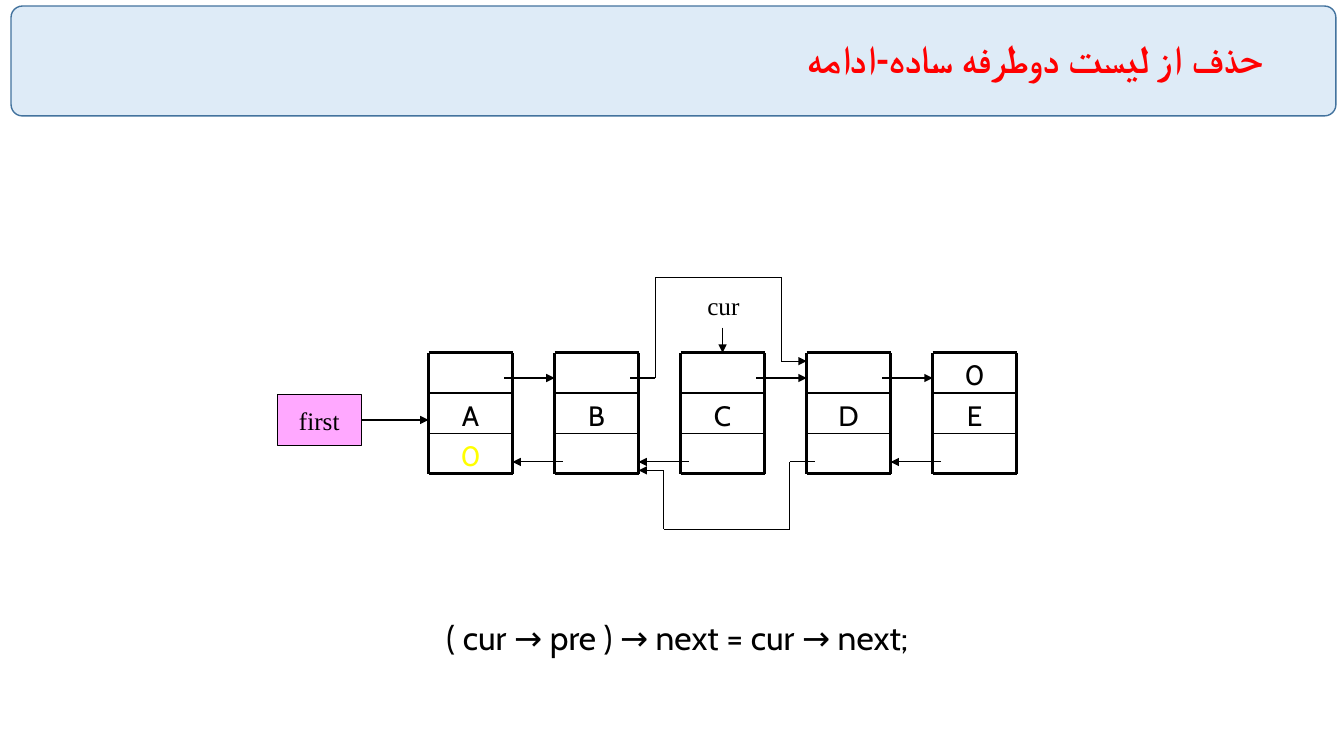
from itertools import pairwise

from lxml import etree
from pptx import Presentation
from pptx.dml.color import RGBColor
from pptx.enum.shapes import MSO_CONNECTOR, MSO_SHAPE
from pptx.enum.text import MSO_ANCHOR, MSO_AUTO_SIZE, PP_ALIGN
from pptx.oxml.ns import qn
from pptx.util import Inches, Pt

STRAIGHT = MSO_CONNECTOR.STRAIGHT
RECTANGLE, ROUNDED = MSO_SHAPE.RECTANGLE, MSO_SHAPE.ROUNDED_RECTANGLE
LEFT, CENTER, RIGHT = PP_ALIGN.LEFT, PP_ALIGN.CENTER, PP_ALIGN.RIGHT
TOP, MIDDLE = MSO_ANCHOR.TOP, MSO_ANCHOR.MIDDLE
FIT_SHAPE = MSO_AUTO_SIZE.SHAPE_TO_FIT_TEXT

COLORS = {
    "banner": "DEEBF7", "banner_line": "43739E", "title": "FF0000",
    "ink": "000000", "null": "FFFF00", "first": "FF00FF",
}
BODY, LABEL, HEADING = "Cabin", "Times New Roman", "Calibri"
SLIDE_WIDTH, SLIDE_HEIGHT = 13.33, 7.5

# The list is laid out on a grid of one twelfth of an inch
UNIT = 1 / 12
NODE_WIDTH, NODE_STEP, ROW_HEIGHT = 10 * UNIT, 15 * UNIT, 0.4
NODES = [  # next, data, previous
    ("", "A", "0"), ("", "B", ""), ("", "C", ""), ("", "D", ""), ("0", "E", ""),
]


def color(name):
    return RGBColor.from_string(COLORS[name])


def write(shape, text, size, font, ink="ink", align=LEFT, anchor=TOP, wrap=True):
    frame = shape.text_frame
    frame.word_wrap = wrap
    frame.vertical_anchor = anchor
    paragraph = frame.paragraphs[0]
    paragraph.alignment = align
    run = paragraph.add_run()
    run.text = text
    run.font.size = Pt(size)
    run.font.name = font
    run.font.color.rgb = color(ink)
    return paragraph, run


def add_text(slide, box, *content, **style):
    shape = slide.shapes.add_textbox(*map(Inches, box))
    return shape, *write(shape, *content, **style)


def add_box(slide, preset, box, fill, line, width):
    shape = slide.shapes.add_shape(preset, *map(Inches, box))
    shape.shadow.inherit = False
    shape.fill.solid()
    shape.fill.fore_color.rgb = color(fill)
    shape.line.color.rgb = color(line)
    shape.line.width = Pt(width)
    return shape


def add_line(slide, start, end, width=0.75, arrow=False):
    line = slide.shapes.add_connector(STRAIGHT, *map(Inches, (*start, *end)))
    line.line.color.rgb = color("ink")
    line.line.width = Pt(width)
    properties = line._element.spPr
    if arrow:
        etree.SubElement(properties.find(qn("a:ln")), qn("a:tailEnd"), type="triangle")
    etree.SubElement(properties, qn("a:effectLst"))


def add_route(slide, points):
    """Joined straight lines, with an arrowhead on the last one."""
    for start, end in pairwise(points):
        add_line(slide, start, end, arrow=end == points[-1])


def add_banner(slide, left, top, width, height):
    banner = add_box(slide, ROUNDED, (left, top, width, height),
                     "banner", "banner_line", 1)
    banner.adjustments[0] = 0.103
    title_box = (left + 0.13, top + 0.09, width - 0.75, height - 0.19)
    _, paragraph, run = add_text(
        slide, title_box, "حذف از ليست دوطرفه ساده-ادامه", 28, HEADING,
        ink="title", align=RIGHT, anchor=MIDDLE)
    paragraph.line_spacing = 0.9
    paragraph._p.get_or_add_pPr().set("rtl", "1")
    run.font.bold = True
    etree.SubElement(run._r.get_or_add_rPr(), qn("a:cs"), typeface=HEADING)


def add_node(slide, left, top, values):
    right, bottom = left + NODE_WIDTH, top + len(values) * ROW_HEIGHT
    for row, value in enumerate(values):
        if value:
            ink = "null" if (row, value) == (2, "0") else "ink"
            add_text(slide, (left, top + row * ROW_HEIGHT, NODE_WIDTH, ROW_HEIGHT),
                     value, 20, BODY, ink=ink, align=CENTER)
    for row in range(len(values) + 1):
        y = top + row * ROW_HEIGHT
        width = 2.25 if row in (0, len(values)) else 1
        add_line(slide, (left, y), (right, y), width)
    for x in (left, right):
        add_line(slide, (x, top), (x, bottom), 2.25)


def add_list(slide, left, top):
    def at(column, row):
        return left + column * UNIT, top + row * UNIT

    # Nodes
    for index, values in enumerate(NODES):
        add_node(slide, left + index * NODE_STEP, top, values)

    # Links between neighbours; B-next and D-previous take the routes below
    for index in range(len(NODES) - 1):
        column = index * 15
        if index != 1:
            add_line(slide, at(column + 9, 3), at(column + 15, 3), arrow=True)
        if index != 2:
            add_line(slide, at(column + 16, 13), at(column + 10, 13), arrow=True)

    # Routes around C
    add_route(slide, [at(24, 3), at(27, 3), at(27, -9), at(42, -9), at(42, 1), at(45, 1)])
    add_route(slide, [at(46, 13), at(43, 13), at(43, 21), at(28, 21), at(28, 14), at(25, 14)])

    # Pointer to the first node
    first = add_box(slide, RECTANGLE, (*at(-18, 5), NODE_WIDTH, 6 * UNIT),
                    "first", "ink", 0.75)
    fill_color = first._element.spPr.find(qn("a:solidFill"))[0]
    etree.SubElement(fill_color, qn("a:alpha"), val="34000")
    write(first, "first", 18, LABEL, align=CENTER, anchor=MIDDLE, wrap=False)
    add_line(slide, at(-8, 8), at(0, 8), arrow=True)

    # Pointer to the current node
    current, _, _ = add_text(slide, (*at(32, -8), 0.52, 0.4), "cur", 18, LABEL, wrap=False)
    current.text_frame.auto_size = FIT_SHAPE
    add_line(slide, at(35, -3), at(35, 0), arrow=True)


def add_statement(slide, box):
    statement, _, _ = add_text(slide, box, "( cur → pre ) → next = cur → next;",
                               24, BODY, wrap=False)
    statement.text_frame.auto_size = FIT_SHAPE


def main():
    presentation = Presentation()
    presentation.slide_width = Inches(SLIDE_WIDTH)
    presentation.slide_height = Inches(SLIDE_HEIGHT)
    slide = presentation.slides.add_slide(presentation.slide_layouts[6])
    add_banner(slide, 0.11, 0.06, 13.14, 1.09)
    add_list(slide, 4.25, 3.5)
    add_statement(slide, (4.33, 6.07, 5.51, 0.5))
    presentation.save("out.pptx")


if __name__ == "__main__":
    main()
